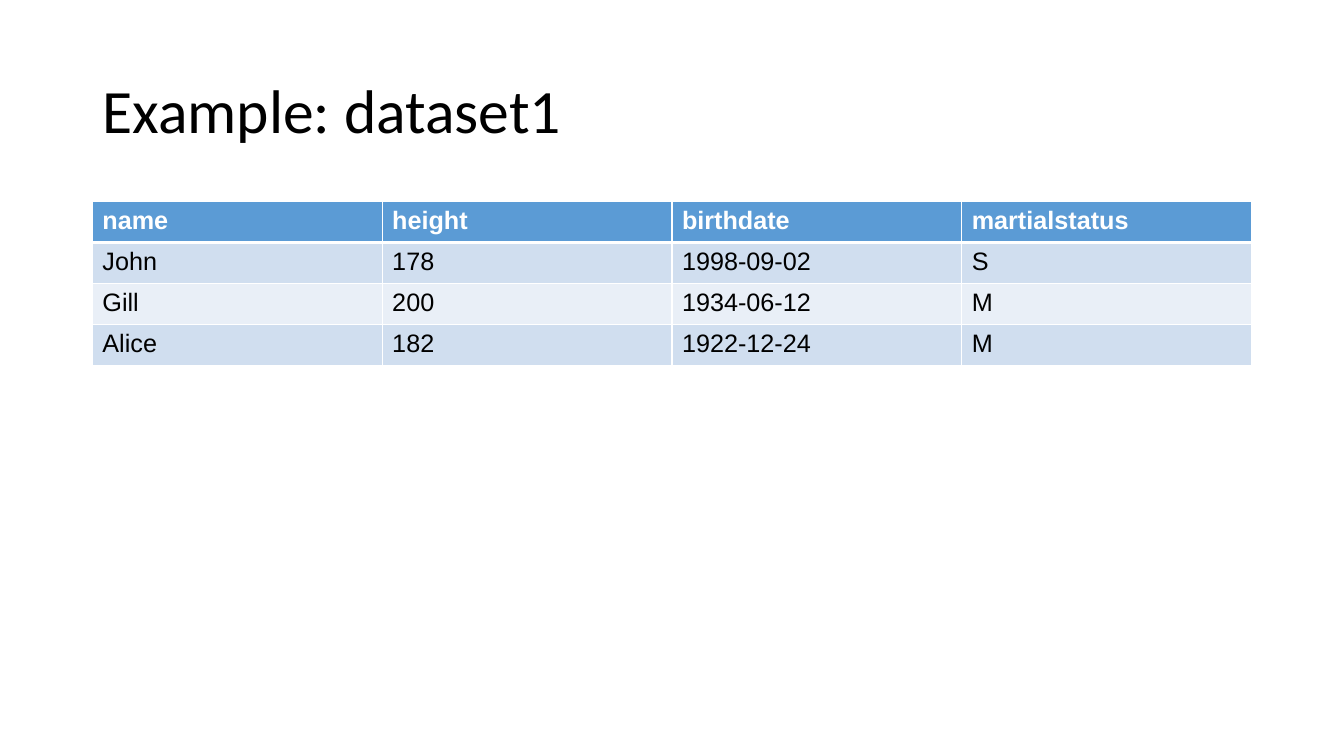
from dataclasses import dataclass
from lxml.etree import SubElement
from pptx import Presentation
from pptx.dml.color import RGBColor as RGB
from pptx.enum.text import MSO_ANCHOR as Anchor, PP_ALIGN as Align
from pptx.oxml.ns import qn
from pptx.util import Pt


@dataclass(frozen=True)
class Theme:
    black: str = "000000"
    white: str = "FFFFFF"
    head: str = "5B9BD5"
    bands: tuple = ("D0DEEF", "E9EFF7")
    title_font: str = "Calibri"
    cell_font: str = "Arial"
    title_size: int = 44
    cell_size: int = 18


THEME = Theme()
LEFT, WIDTH = 66, 828
ROW = 29.2
DATA = [
    ("name", "height", "birthdate", "martialstatus"),
    ("John", "178", "1998-09-02", "S"),
    ("Gill", "200", "1934-06-12", "M"),
    ("Alice", "182", "1922-12-24", "M"),
]


def write(frame, text, *, font, size, color, bold=False, space=1.0):
    para = frame.paragraphs[0]
    para.alignment = Align.LEFT
    para.line_spacing = space
    run = para.add_run()
    run.text = text
    run.font.name = font
    run.font.size = Pt(size)
    run.font.bold = bold
    run.font.color.rgb = RGB.from_string(color)


def add_title(slide, text):
    title = slide.shapes.title
    title.left, title.top = Pt(LEFT), Pt(28.75)
    title.width, title.height = Pt(WIDTH), Pt(104.4)
    frame = title.text_frame
    frame.word_wrap = True
    frame.vertical_anchor = Anchor.MIDDLE
    write(frame, text, font=THEME.title_font, size=THEME.title_size,
          color=THEME.black, space=0.9)


def fill_cell(cell, color):
    cell.fill.solid()
    cell.fill.fore_color.rgb = RGB.from_string(color)


def rule_cell(cell, **widths):
    """Draw white borders; widths maps L, R, T and B to points."""
    props = cell._tc.get_or_add_tcPr()
    for side, width in widths.items():
        line = SubElement(props, qn(f"a:ln{side}"), w=str(Pt(width)))
        solid = SubElement(line, qn("a:solidFill"))
        SubElement(solid, qn("a:srgbClr"), val=THEME.white)


def add_grid(slide, data):
    rows, cols = len(data), len(data[0])
    grid = slide.shapes.add_table(rows, cols, Pt(LEFT), Pt(144),
                                  Pt(WIDTH), Pt(ROW * rows)).table
    for r, record in enumerate(data):
        head = r == 0
        grid.rows[r].height = Pt(ROW)
        for c, text in enumerate(record):
            cell = grid.cell(r, c)
            rule_cell(cell, L=1, R=1, T=3 if r == 1 else 1, B=3 if head else 1)
            fill_cell(cell, THEME.head if head else THEME.bands[(r - 1) % 2])
            write(cell.text_frame, text, font=THEME.cell_font,
                  size=THEME.cell_size, bold=head,
                  color=THEME.white if head else THEME.black)


def main():
    deck = Presentation()
    deck.slide_width, deck.slide_height = Pt(960), Pt(540)
    slide = deck.slides.add_slide(deck.slide_layouts[5])
    add_title(slide, "Example: dataset1")
    add_grid(slide, DATA)
    deck.save("out.pptx")


if __name__ == "__main__":
    main()
